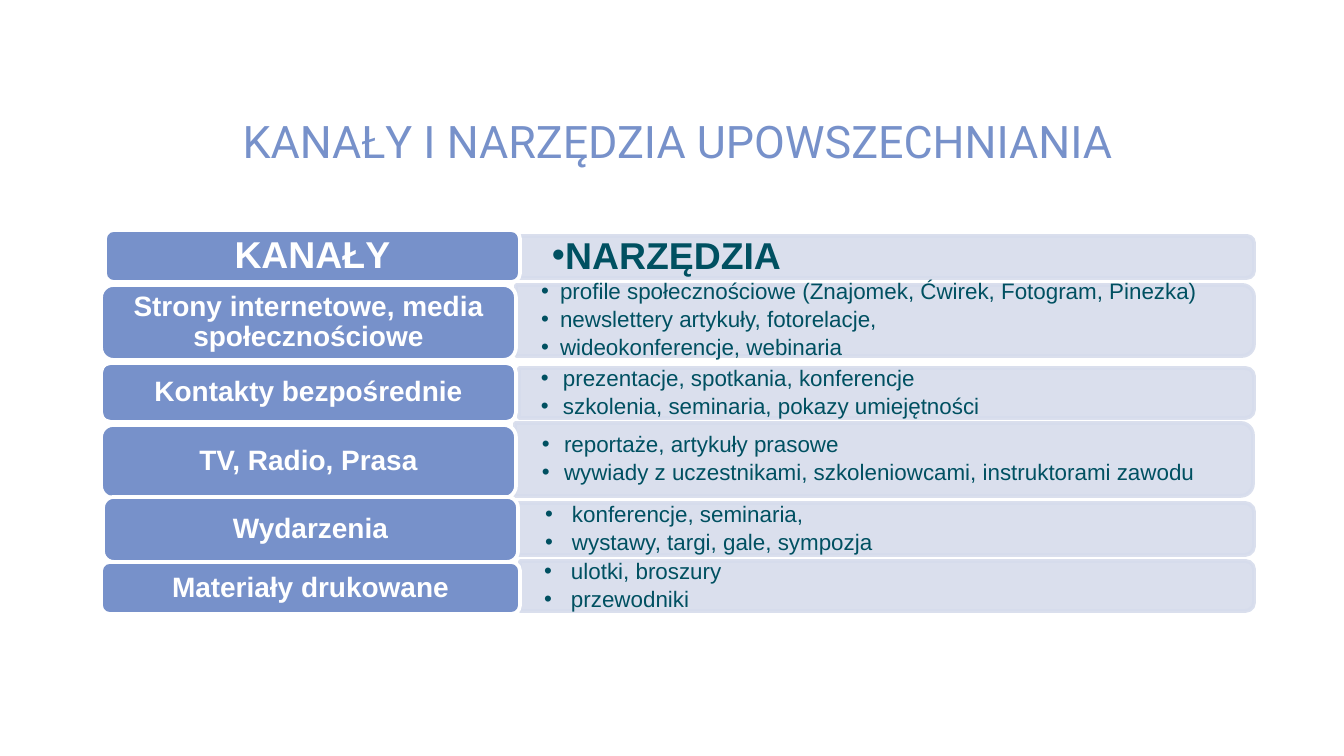
from lxml import etree
from pptx import Presentation
from pptx.dml.color import RGBColor
from pptx.enum.shapes import MSO_SHAPE
from pptx.enum.text import MSO_ANCHOR, PP_ALIGN
from pptx.oxml.ns import qn
from pptx.util import Pt

ROUND = MSO_SHAPE.ROUNDED_RECTANGLE
TAB = MSO_SHAPE.ROUND_2_SAME_RECTANGLE
MIDDLE = MSO_ANCHOR.MIDDLE
CENTER = PP_ALIGN.CENTER

BLUE = RGBColor(0x77, 0x91, 0xCA)
PALE = RGBColor(0xD6, 0xDC, 0xEC)
TEAL = RGBColor(0x00, 0x50, 0x61)
WHITE = RGBColor(0xFF, 0xFF, 0xFF)

TITLE = "KANAŁY I NARZĘDZIA UPOWSZECHNIANIA"

# label, label box, tools, bar box, (inset, margin, indent), label size, tool size
ROWS = [
    ("KANAŁY", (105, 230, 415, 52), ["NARZĘDZIA"],
     (516, 236, 738, 42), (36, 0, -34), 20, 20),
    ("Strony internetowe, media społecznościowe", (101, 285, 415, 75),
     ["profile społecznościowe (Znajomek, Ćwirek, Fotogram, Pinezka)",
      "newslettery artykuły, fotorelacje,",
      "wideokonferencje, webinaria"],
     (516, 285, 738, 71), (11, 33, -19), 15, 12),
    ("Kontakty bezpośrednie", (101, 363, 415, 59),
     ["prezentacje, spotkania, konferencje",
      "szkolenia, seminaria, pokazy umiejętności"],
     (519, 368, 735, 50), (22, 22, -22), 15, 12),
    ("TV, Radio, Prasa", (101, 425, 415, 73),
     ["reportaże, artykuły prasowe",
      "wywiady z uczestnikami, szkoleniowcami, instruktorami zawodu"],
     (515, 423, 738, 73), (27, 22, -22), 15, 12),
    ("Wydarzenia", (103, 497, 415, 65),
     ["konferencje, seminaria,", "wystawy, targi, gale, sympozja"],
     (516, 503, 738, 52), (16, 40, -27), 15, 12),
    ("Materiały drukowane", (101, 562, 419, 52),
     ["ulotki, broszury", "przewodniki"],
     (520, 561, 734, 50), (11, 40, -27), 15, 12),
]


def px(n):
    return round(n * 914400 / 134.4)


def style(para, size, color, bold=False, face="Arial"):
    for run in para.runs:
        font = run.font
        font.name, font.size, font.bold = face, Pt(size), bold
        font.color.rgb = color


def inset(frame, left, right, edge):
    frame.word_wrap = True
    frame.vertical_anchor = MIDDLE
    frame.margin_left, frame.margin_right = px(left), px(right)
    frame.margin_top = frame.margin_bottom = px(edge)


def block(kind, box, fill, line):
    shape = slide.shapes.add_shape(kind, *map(px, box))
    shape.shadow.inherit = False
    shape.fill.solid()
    shape.fill.fore_color.rgb = fill
    shape.line.color.rgb = line
    shape.line.width = Pt(2)
    return shape


def add_bar(box):
    # A turned shape keeps its centre, so width and height swap around it
    x, y, w, h = box
    bar = block(TAB, (x + (w - h) / 2, y + (h - w) / 2, h, w), PALE, PALE)
    bar.rotation = 90
    for color in bar._element.spPr.iter(qn("a:srgbClr")):
        etree.SubElement(color, qn("a:alpha"), val="90000")


def add_tools(tools, box, gaps, size):
    x, y, w, h = box
    left, margin, indent = gaps
    area = slide.shapes.add_textbox(px(x), px(y + 3), px(w - 3), px(h - 6))
    frame = area.text_frame
    inset(frame, left, 36, 0)
    frame.text = "\n".join(tools)
    for para in frame.paragraphs:
        para.level = 1
        para.line_spacing = 0.9
        if len(tools) > 1:
            para.space_after = Pt(2)
        props = para._p.get_or_add_pPr()
        props.set("marL", str(px(margin)))
        props.set("indent", str(px(indent)))
        etree.SubElement(props, qn("a:buFont"), typeface="Arial")
        etree.SubElement(props, qn("a:buChar"), char="•")
        style(para, size, TEAL, len(tools) == 1)


def add_label(label, box, size):
    frame = block(ROUND, box, BLUE, WHITE).text_frame
    inset(frame, 8, 8, 4)
    frame.text = label
    para = frame.paragraphs[0]
    para.alignment = CENTER
    para.line_spacing = 0.9
    style(para, size, WHITE, True)


deck = Presentation()
deck.slide_width, deck.slide_height = px(1344), px(756)
slide = deck.slides.add_slide(deck.slide_layouts[5])

# Title
title = slide.shapes.title
title.left, title.top, title.width, title.height = map(px, (101, 93, 1153, 96))
title.text_frame.text = TITLE
title.text_frame.vertical_anchor = MIDDLE
head = title.text_frame.paragraphs[0]
head.alignment = CENTER
style(head, 24, BLUE, face="Roboto")

# Channels on the left, tools on the right
for label, spot, tools, bar, gaps, big, small in ROWS:
    add_bar(bar)
    add_tools(tools, bar, gaps, small)
    add_label(label, spot, big)

deck.save("out.pptx")
